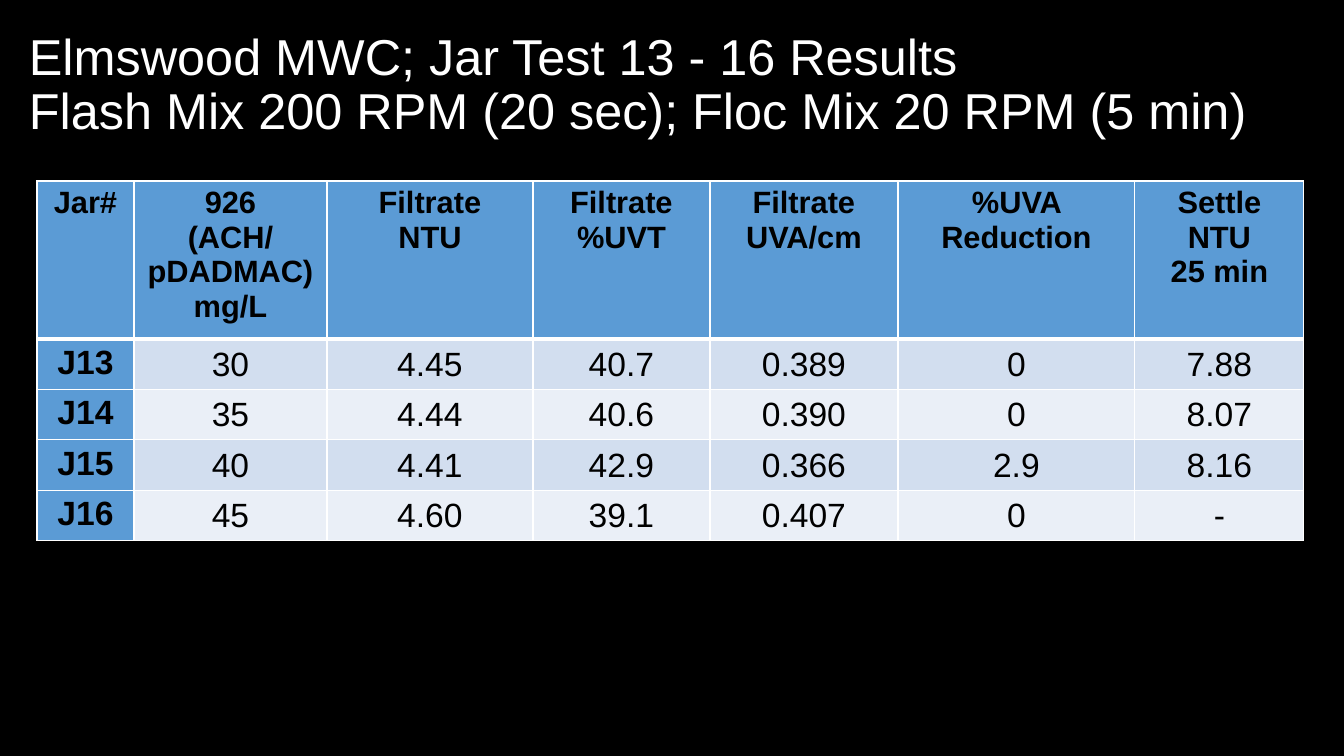
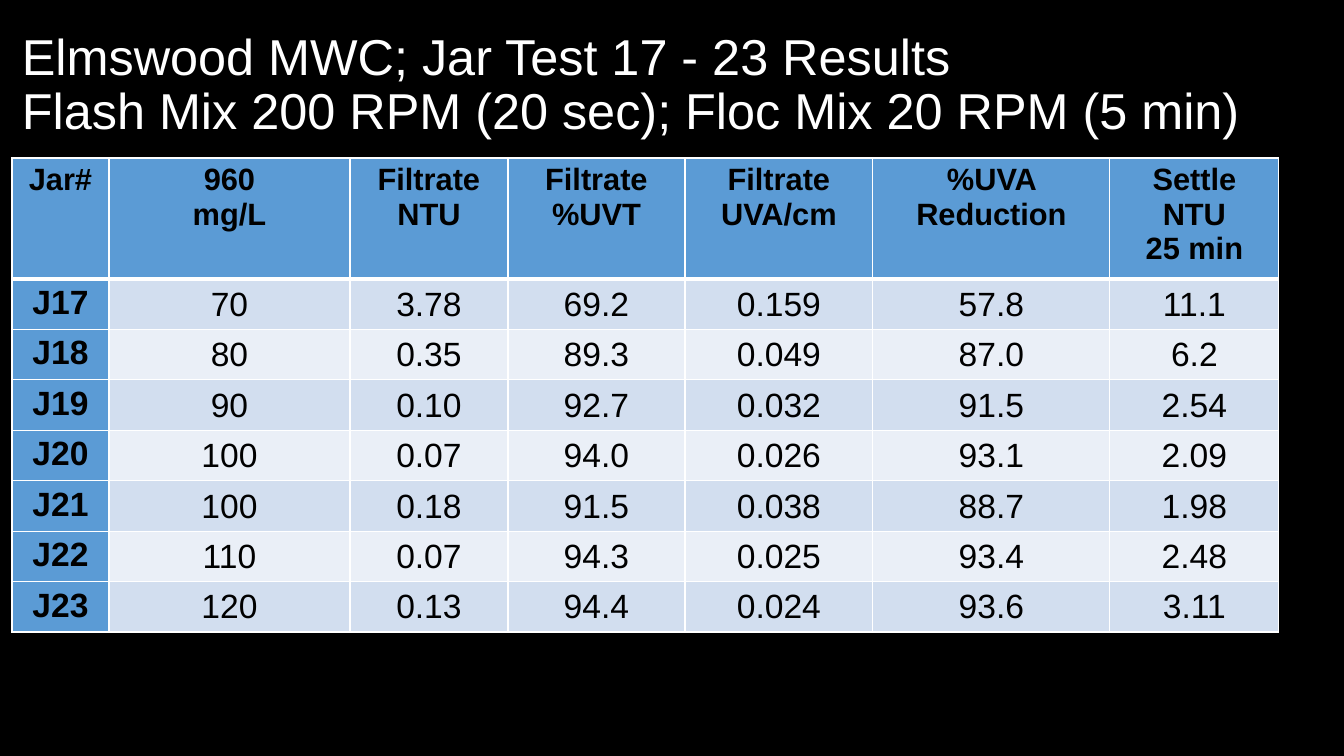
from lxml import etree
from pptx import Presentation
from pptx import util as u
from pptx.dml.color import RGBColor
from pptx.enum import text
from pptx.oxml.ns import qn

PX = 914400 / 100.8
FONT = "Arial"
BLACK = RGBColor(0x00, 0x00, 0x00)
WHITE = RGBColor(0xFF, 0xFF, 0xFF)
BLUE = RGBColor(0x5B, 0x9B, 0xD5)
BANDS = (RGBColor(0xD2, 0xDE, 0xEF), RGBColor(0xEA, 0xEF, 0xF7))
ROW_H = 47
FLASH_FLOC = "Flash Mix 200 RPM (20 sec); Floc Mix 20 RPM (5 min)"
MEASURES = ["Filtrate\nNTU", "Filtrate\n%UVT", "Filtrate\nUVA/cm",
            "%UVA Reduction", "Settle\nNTU\n25 min"]

SLIDES = [
    dict(
        title="Elmswood MWC; Jar Test 13 - 16 Results",
        title_box=(19, 13, 1300, 146),
        table_at=(37, 181),
        cols=(97, 193, 206, 177, 188, 237, 169),
        header_h=148,
        dose="926\n(ACH/pDADMAC)\nmg/L",
        rows=[
            ("J13", "30", "4.45", "40.7", "0.389", "0", "7.88"),
            ("J14", "35", "4.44", "40.6", "0.390", "0", "8.07"),
            ("J15", "40", "4.41", "42.9", "0.366", "2.9", "8.16"),
            ("J16", "45", "4.60", "39.1", "0.407", "0", "-"),
        ],
    ),
    dict(
        title="Elmswood MWC; Jar Test 17 - 23 Results",
        title_box=(12, 13, 1313, 146),
        table_at=(12, 158),
        cols=(97, 241, 158, 177, 188, 237, 169),
        header_h=113,
        dose="960\nmg/L",
        rows=[
            ("J17", "70", "3.78", "69.2", "0.159", "57.8", "11.1"),
            ("J18", "80", "0.35", "89.3", "0.049", "87.0", "6.2"),
            ("J19", "90", "0.10", "92.7", "0.032", "91.5", "2.54"),
            ("J20", "100", "0.07", "94.0", "0.026", "93.1", "2.09"),
            ("J21", "100", "0.18", "91.5", "0.038", "88.7", "1.98"),
            ("J22", "110", "0.07", "94.3", "0.025", "93.4", "2.48"),
            ("J23", "120", "0.13", "94.4", "0.024", "93.6", "3.11"),
        ],
    ),
]


def px(n):
    return u.Emu(round(n * PX))


def style(p, size, color, bold=False):
    f = p.font
    f.name, f.size, f.bold = FONT, u.Pt(size), bold
    f.color.rgb = color


def add_title(s, box, title):
    tf = s.shapes.add_textbox(*map(px, box)).text_frame
    tf.word_wrap = True
    tf.vertical_anchor = text.MSO_ANCHOR.MIDDLE
    p = tf.paragraphs[0]
    p.text = f"{title}\v{FLASH_FLOC}"
    p.line_spacing = 0.9
    style(p, 36, WHITE)


def set_borders(cell, top, bottom):
    tcPr = cell._tc.get_or_add_tcPr()
    for side, width in (("L", 1), ("R", 1), ("T", top), ("B", bottom)):
        ln = etree.SubElement(tcPr, qn(f"a:ln{side}"), w=str(u.Pt(width)))
        fill = etree.SubElement(ln, qn("a:solidFill"))
        etree.SubElement(fill, qn("a:srgbClr"), val=str(WHITE))


def fill_cell(cell, value, row, col):
    header, label = row == 0, col == 0
    set_borders(cell, 3 if row == 1 else 1, 3 if header else 1)
    cell.fill.solid()
    cell.fill.fore_color.rgb = BLUE if header or label else BANDS[(row - 1) % 2]
    if not (header or label):
        cell.vertical_anchor = text.MSO_ANCHOR.MIDDLE
        cell.margin_left = cell.margin_right = cell.margin_top = px(1)
        cell.margin_bottom = 0
    cell.text = value
    for p in cell.text_frame.paragraphs:
        p.alignment = text.PP_ALIGN.CENTER
        style(p, 22 if header else 24, BLACK, header or label)


def add_results(s, at, cols, header_h, rows):
    heights = [header_h] + [ROW_H] * (len(rows) - 1)
    box = (*at, sum(cols), sum(heights))
    tbl = s.shapes.add_table(len(rows), len(cols), *map(px, box)).table
    tbl.first_row = tbl.horz_banding = False
    for column, w in zip(tbl.columns, cols):
        column.width = px(w)
    for r, (values, h) in enumerate(zip(rows, heights)):
        tbl.rows[r].height = px(h)
        for c, value in enumerate(values):
            fill_cell(tbl.cell(r, c), value, r, c)


def add_jar_test(prs, d):
    s = prs.slides.add_slide(prs.slide_layouts[6])
    s.background.fill.solid()
    s.background.fill.fore_color.rgb = BLACK
    add_title(s, d["title_box"], d["title"])
    header = ["Jar#", d["dose"], *MEASURES]
    add_results(s, d["table_at"], d["cols"], d["header_h"], [header, *d["rows"]])


def main():
    prs = Presentation()
    prs.slide_width, prs.slide_height = px(1344), px(756)
    for d in SLIDES:
        add_jar_test(prs, d)
    prs.save("out.pptx")


if __name__ == "__main__":
    main()
